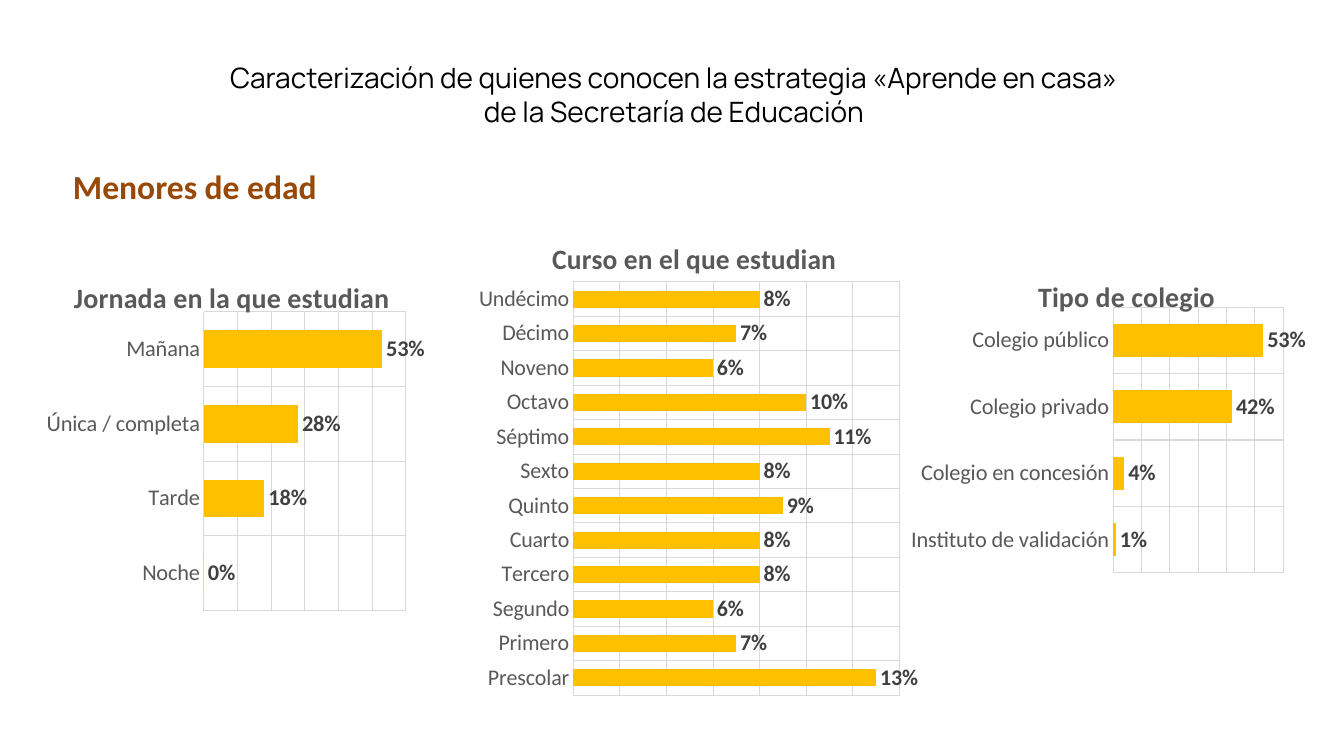
from pptx import Presentation, util as u
from pptx.chart.data import CategoryChartData
from pptx.dml.color import RGBColor
from pptx.enum import chart as ch, text
from pptx.oxml import parse_xml
from pptx.oxml.ns import nsdecls, qn

HEAD = "Caracterización de quienes conocen la estrategia «Aprende en casa» de la Secretaría de Educación"
GROUP = "Menores de edad"
CHARTS = [
    dict(title="Jornada en la que estudian", box=(18, 250, 417, 377),
         spot=(69, 273), plot=(204, 312, 202, 299), top=0.6, step=0.1,
         rows=[("Noche", 0), ("Tarde", 0.18), ("Única / completa", 0.28),
               ("Mañana", 0.53)]),
    dict(title="Curso en el que estudian", box=(471, 213, 447, 493),
         spot=(549, 234), plot=(575, 282, 333, 413), top=0.14, step=0.02,
         rows=[("Prescolar", 0.13), ("Primero", 0.07), ("Segundo", 0.06),
               ("Tercero", 0.08), ("Cuarto", 0.08), ("Quinto", 0.09),
               ("Sexto", 0.08), ("Séptimo", 0.11), ("Octavo", 0.1),
               ("Noveno", 0.06), ("Décimo", 0.07), ("Undécimo", 0.08)]),
    dict(title="Tipo de colegio", box=(911, 250, 414, 344),
         spot=(1032, 272), plot=(1112, 307, 171, 266), top=0.6, step=0.1,
         rows=[("Instituto de validación", 0.01), ("Colegio en concesión", 0.04),
               ("Colegio privado", 0.42), ("Colegio público", 0.53)]),
]
GRAY, GRID, GOLD = "595959", "D9D9D9", "FFC000"


def px(n):
    return u.Emu(round(n * 914400 / 100.8))


def color(code):
    return RGBColor.from_string(code)


def style(font, size, code, bold=False, name="Calibri"):
    font.size, font.bold, font.name = u.Pt(size), bold, name
    font.color.rgb = color(code)


def line(form):
    form.line.color.rgb = color(GRID)
    form.line.width = u.Pt(0.75)


def label(box, words, size, code, bold, name, align, wrap):
    frame = slide.shapes.add_textbox(*map(px, box)).text_frame
    frame.word_wrap = wrap
    para = frame.paragraphs[0]
    para.text, para.alignment = words, align
    style(para.font, size, code, bold, name)


def place(node, index, box, area, inner=False):
    for old in node.findall(qn("c:layout")):
        node.remove(old)
    left, top, wide, high = box
    parts = [("x", (area[0] - left) / wide), ("y", (area[1] - top) / high)]
    if inner:
        parts += [("w", area[2] / wide), ("h", area[3] / high)]
    target = '<c:layoutTarget val="inner"/>' if inner else ""
    modes = '<c:xMode val="edge"/><c:yMode val="edge"/>'
    sizes = "".join(f'<c:{key} val="{val:.3f}"/>' for key, val in parts)
    node.insert(index, parse_xml(
        f'<c:layout {nsdecls("c")}><c:manualLayout>{target}{modes}{sizes}'
        '</c:manualLayout></c:layout>'))


def bars(item):
    data = CategoryChartData(number_format="0%")
    data.categories = [name for name, val in item["rows"]]
    data.add_series("Series 1", [val for name, val in item["rows"]])
    box = item["box"]
    chart = slide.shapes.add_chart(
        ch.XL_CHART_TYPE.BAR_CLUSTERED, *map(px, box), data).chart
    chart.has_legend = False
    style(chart.font, 10, "000000")

    title = chart.chart_title
    para = title.text_frame.paragraphs[0]
    para.text = item["title"]
    style(para.font, 20, GRAY, True)
    place(title.element, 1, box, item["spot"])
    place(chart.element.find(".//" + qn("c:plotArea")), 0, box, item["plot"], True)

    cat, val = chart.category_axis, chart.value_axis
    for axis in (cat, val):
        axis.has_major_gridlines = True
        line(axis.major_gridlines.format)
        axis.major_tick_mark = ch.XL_TICK_MARK.NONE
    line(cat.format)
    style(cat.tick_labels.font, 16, GRAY)
    val.visible = False
    val.minimum_scale, val.maximum_scale = 0, item["top"]
    val.major_unit = item["step"]

    plot = chart.plots[0]
    plot.gap_width, plot.vary_by_categories = 100, False
    fill = plot.series[0].format.fill
    fill.solid()
    fill.fore_color.rgb = color(GOLD)
    tags = plot.series[0].data_labels
    tags.show_value = True
    tags.number_format, tags.number_format_is_linked = "0%", False
    tags.position = ch.XL_LABEL_POSITION.OUTSIDE_END
    style(tags.font, 16, "404040", True)


deck = Presentation()
deck.slide_width, deck.slide_height = px(1344), px(756)
slide = deck.slides.add_slide(deck.slide_layouts[6])
label((209, 56, 930, 72), HEAD, 20, "000000", False, "Manrope",
      text.PP_ALIGN.CENTER, True)
label((63, 161, 267, 50), GROUP, 24, "984807", True, "Calibri",
      text.PP_ALIGN.LEFT, False)
for item in CHARTS:
    bars(item)
deck.save("out.pptx")
